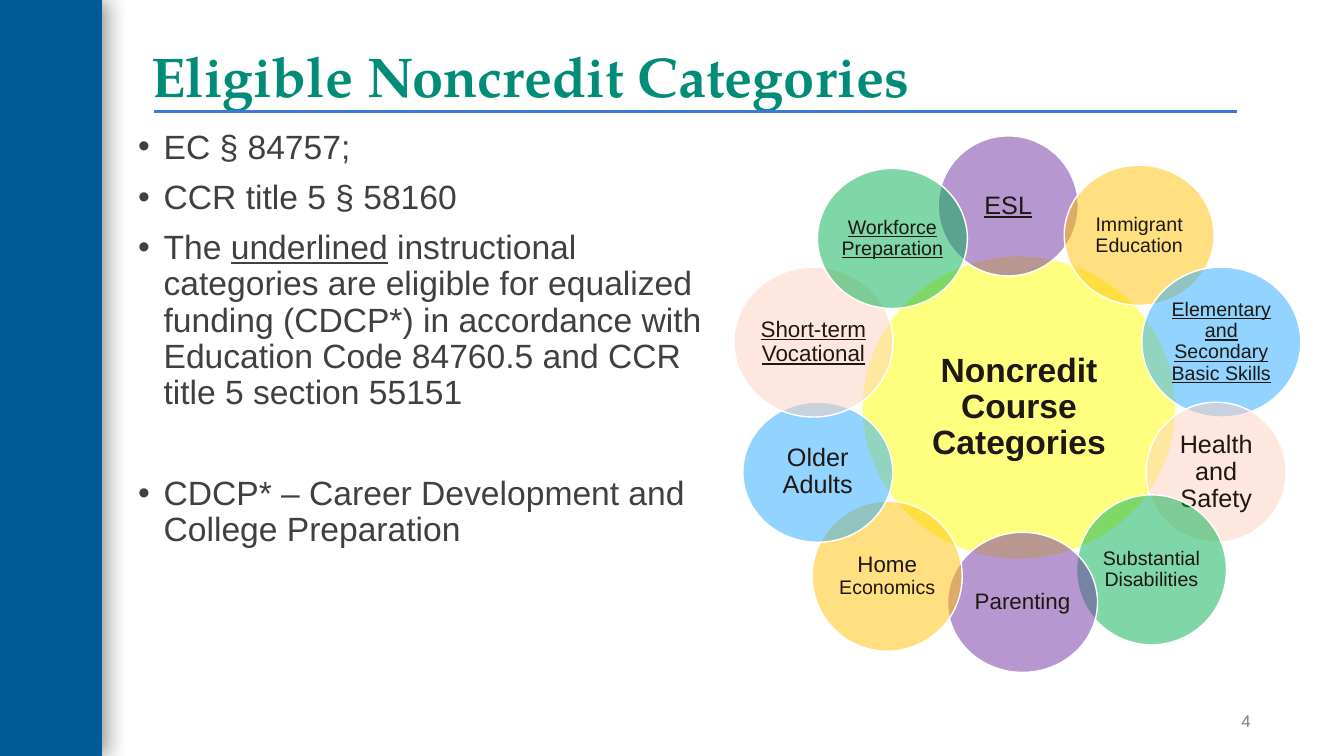
from lxml import etree
from pptx import Presentation
from pptx.dml.color import RGBColor
from pptx.enum.shapes import MSO_CONNECTOR, MSO_SHAPE
from pptx.enum.text import MSO_ANCHOR, MSO_AUTO_SIZE, PP_ALIGN
from pptx.oxml import parse_xml
from pptx.oxml.ns import qn
from pptx.util import Cm, Pt

RECT, OVAL = MSO_SHAPE.RECTANGLE, MSO_SHAPE.OVAL
LINE = MSO_CONNECTOR.STRAIGHT
MID, TOP, BOTTOM = MSO_ANCHOR.MIDDLE, MSO_ANCHOR.TOP, MSO_ANCHOR.BOTTOM
LEFT, CENTER, RIGHT = PP_ALIGN.LEFT, PP_ALIGN.CENTER, PP_ALIGN.RIGHT
FIXED = MSO_AUTO_SIZE.NONE
NS = "http://schemas.openxmlformats.org/drawingml/2006/main"

INK, GRAY = "1D1813", "404040"
PURPLE, GOLD, BLUE, PEACH, GREEN = "7030A0", "FFC000", "26ABFF", "FED0BE", "00B050"

# Bullets: space before, then runs as (text, underlined)
POINTS = [
    (0, [("EC § 84757;", False)]),
    (10, [("CCR title 5 § 58160", False)]),
    (10, [("The ", False), ("underlined", True),
          (" instructional categories are eligible for equalized funding (CDCP*) "
           "in accordance with Education Code 84760.5 and CCR title 5 section 55151", False)]),
    (46, [("CDCP* – Career Development and College Preparation", False)]),
]

# Petals: offset from the hub centre, size, colour, underlined, runs as (text, points)
PETALS = [
    (-0.27, -5.08, 3.53, 3.53, PURPLE, True, [("ESL", 18)]),
    (3.03, -4.34, 3.78, 3.53, GOLD, False, [("Immigrant Education", 14)]),
    (5.1, -1.65, 4.01, 3.78, BLUE, True, [("Elementary and Secondary Basic Skills", 14)]),
    (4.97, 1.63, 3.53, 3.53, PEACH, False, [("Health and Safety", 18)]),
    (3.34, 4.09, 3.78, 3.78, GREEN, False, [("Substantial Disabilities", 14)]),
    (0.09, 4.91, 3.78, 3.53, PURPLE, False, [("Parenting", 16)]),
    (-3.32, 4.25, 3.78, 3.78, GOLD, False, [("Home ", 16), ("Economics", 14)]),
    (-5.07, 1.63, 3.78, 3.53, BLUE, False, [("Older Adults", 18)]),
    (-5.18, -1.65, 4.01, 3.78, PEACH, True, [("Short-term Vocational", 16)]),
    (-3.19, -4.26, 3.78, 3.53, GREEN, True, [("Workforce Preparation", 14)]),
]


def rgb(code):
    return RGBColor.from_string(code)


def place(shape, x, y, w, h):
    shape.left, shape.top, shape.width, shape.height = Cm(x), Cm(y), Cm(w), Cm(h)


def style(run, size, color, face="Arial", bold=False, under=False):
    font = run.font
    font.size, font.name, font.bold = Pt(size), face, bold
    font.underline = under
    font.color.rgb = rgb(color)


def band(slide, x, y, w, h):
    """Side band with a soft shadow."""
    bar = slide.shapes.add_shape(RECT, Cm(x), Cm(y), Cm(w), Cm(h))
    bar.fill.solid()
    bar.fill.fore_color.rgb = rgb("005B96")
    bar.line.fill.background()
    bar._element.spPr.append(parse_xml(
        f'<a:effectLst xmlns:a="{NS}"><a:outerShdw blurRad="190500" dist="38100" dir="0">'
        '<a:srgbClr val="000000"><a:alpha val="40000"/></a:srgbClr>'
        '</a:outerShdw></a:effectLst>'))


def head(slide, x, y, w, h):
    """Title and the rule under it."""
    title = slide.shapes.title
    place(title, x, y, w, h)
    frame = title.text_frame
    frame.text = "Eligible Noncredit Categories"
    frame.auto_size, frame.vertical_anchor = FIXED, BOTTOM
    para = frame.paragraphs[0]
    para.alignment, para.line_spacing = LEFT, 0.9
    style(para.runs[0], 40, "008C77", "TeX Gyre Pagella", bold=True)

    level = Cm(y + h - 0.08)
    rule = slide.shapes.add_connector(LINE, Cm(x + 0.33), level, Cm(x + w - 0.3), level)
    rule.line.color.rgb = rgb("3C78D8")
    rule.line.width = Pt(2.25)
    etree.SubElement(rule._element.spPr, qn("a:effectLst"))


def points(slide, x, y, w, h):
    """Bulleted list in the body placeholder."""
    body = slide.placeholders[1]
    place(body, x, y, w, h)
    frame = body.text_frame
    frame.auto_size, frame.vertical_anchor = FIXED, TOP
    for i, (gap, parts) in enumerate(POINTS):
        para = frame.paragraphs[0] if i == 0 else frame.add_paragraph()
        props = para._p.get_or_add_pPr()
        props.set("marL", str(Cm(0.64)))
        props.set("indent", str(Cm(-0.64)))
        etree.SubElement(props, qn("a:buChar")).set("char", "•")
        para.alignment, para.line_spacing = LEFT, 0.9
        para.space_before = Pt(gap)
        for text, under in parts:
            run = para.add_run()
            run.text = text
            style(run, 24, GRAY, under=under)


def disc(slide, x, y, w, h, color, parts, bold=False, under=False):
    """Half-clear ellipse centred on x, y with its label."""
    oval = slide.shapes.add_shape(OVAL, Cm(x - w / 2), Cm(y - h / 2), Cm(w), Cm(h))
    oval.shadow.inherit = False
    oval.fill.solid()
    oval.fill.fore_color.rgb = rgb(color)
    tint = oval._element.spPr.find(qn("a:solidFill")).find(qn("a:srgbClr"))
    etree.SubElement(tint, qn("a:alpha")).set("val", "50000")
    oval.line.color.rgb = rgb("FFFFFF")
    oval.line.width = Pt(1)
    frame = oval.text_frame
    frame.word_wrap, frame.vertical_anchor = True, MID
    # No side margins, so that the longest word fits on one line
    frame.margin_left = frame.margin_right = 0
    frame.margin_top = frame.margin_bottom = Cm(0.06)
    para = frame.paragraphs[0]
    para.alignment, para.line_spacing = CENTER, 0.9
    for text, size in parts:
        run = para.add_run()
        run.text = text
        style(run, size, INK, bold=bold, under=under)


def wheel(slide, x, y, w, h):
    """Hub with its ring of petals."""
    mid, axis = x + w / 2, y + h / 2
    disc(slide, mid, axis, 7.92, 7.65, "FFFF00",
         [("Noncredit Course Categories", 24)], bold=True)
    for dx, dy, pw, ph, color, under, parts in PETALS:
        disc(slide, mid + dx, axis + dy, pw, ph, color, parts, under=under)


def number(slide, x, y, w, h):
    """Page number."""
    box = slide.shapes.add_textbox(Cm(x), Cm(y), Cm(w), Cm(h))
    frame = box.text_frame
    frame.text = "4"
    frame.word_wrap, frame.vertical_anchor = True, MID
    frame.margin_right = 0
    para = frame.paragraphs[0]
    para.alignment = RIGHT
    style(para.runs[0], 12, "7F7F7F")


def main():
    deck = Presentation()
    deck.slide_width, deck.slide_height = Cm(33.87), Cm(19.05)
    slide = deck.slides.add_slide(deck.slide_layouts[1])
    band(slide, 0, 0, 2.57, 19.05)
    head(slide, 3.56, 1.02, 27.91, 1.88)
    points(slide, 3.23, 3.15, 15.44, 13.94)
    wheel(slide, 18.51, 3.51, 14.34, 13.52)
    number(slide, 28.98, 17.65, 2.54, 1.02)
    deck.save("out.pptx")


if __name__ == "__main__":
    main()
